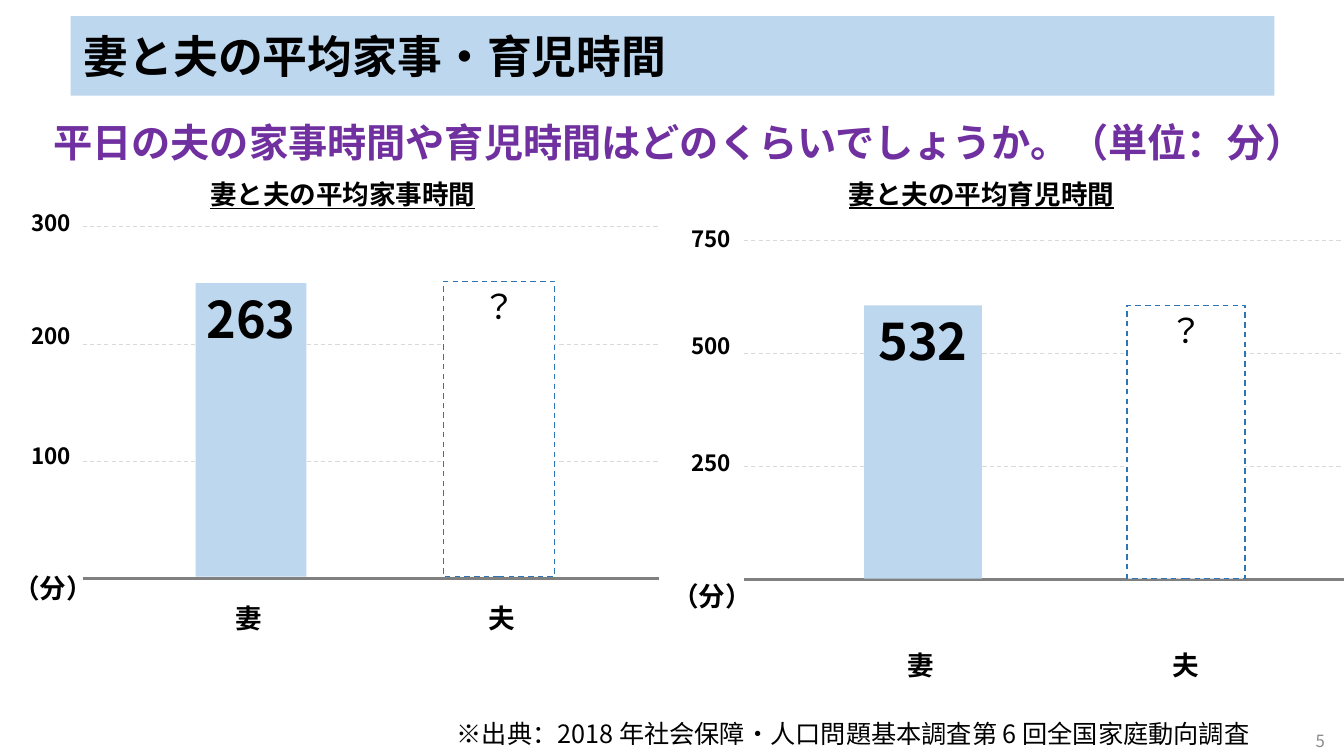
from dataclasses import dataclass

from lxml import etree
from pptx import Presentation
from pptx.dml.color import RGBColor
from pptx.enum.dml import MSO_LINE
from pptx.enum.shapes import MSO_CONNECTOR, MSO_SHAPE
from pptx.enum.text import MSO_ANCHOR, MSO_AUTO_SIZE, PP_ALIGN
from pptx.oxml.ns import qn
from pptx.util import Inches, Pt

FONT = "Noto Sans CJK JP"
BLACK, WHITE, SKY = "000000", "FFFFFF", "BDD7EE"
BLUE, PURPLE, GRAY, PALE, DIM = "2E75B6", "7030A0", "808080", "D9D9D9", "8C8C8C"
DASH = MSO_LINE.DASH
STRAIGHT = MSO_CONNECTOR.STRAIGHT
RECT = MSO_SHAPE.RECTANGLE
LEFT, CENTER = PP_ALIGN.LEFT, PP_ALIGN.CENTER
TOP, MIDDLE = MSO_ANCHOR.TOP, MSO_ANCHOR.MIDDLE
NO_FIT = MSO_AUTO_SIZE.NONE


@dataclass
class Panel:
    """Places and values of one bar panel."""

    title: str
    title_box: tuple
    left: float
    right: float
    base: float
    peak: float
    scale: tuple
    scale_tops: tuple
    scale_left: float
    scale_width: float
    value: str
    bars: tuple
    names: tuple
    unit: tuple


HOUSE = Panel(
    "妻と夫の平均家事時間", (0.24, 1.41, 6.32, 1.03),
    0.82, 6.54, 5.74, 2.25,
    ("300", "200", "100"), (1.98, 3.1, 4.29), 0.07, 0.88,
    "263", ((1.94, 2.81, 1.1, 2.91), (4.4, 2.79, 1.1, 2.93)),
    ((1.4, 5.62, 2.13, 1.02), (3.91, 5.62, 2.13, 1.02)),
    (-0.21, 5.48, 1.47, 0.71),
)
CHILD = Panel(
    "妻と夫の平均育児時間", (6.82, 1.54, 5.83, 0.76),
    7.38, 13.33, 5.75, 2.39,
    ("750", "500", "250"), (2.13, 3.2, 4.36), 6.58, 0.94,
    "532", ((8.57, 3.03, 1.17, 2.71), (11.18, 3.03, 1.17, 2.71)),
    ((8, 6.1, 2.26, 0.99), (10.63, 6.1, 2.26, 0.99)),
    (6.33, 5.56, 1.47, 0.71),
)


def rgb(code):
    """Turn a hex string into a colour."""
    return RGBColor.from_string(code)


def inch(box):
    """Turn a box of numbers into lengths."""
    return [Inches(n) for n in box]


def write(shape, text, size, color=BLACK, bold=True, under=False,
          align=CENTER, anchor=MIDDLE, pad=(0.13, 0.07), wrap=True):
    """Put one formatted run into a shape."""
    frame = shape.text_frame
    frame.auto_size = NO_FIT
    frame.word_wrap = wrap
    frame.vertical_anchor = anchor
    frame.margin_left = frame.margin_right = Inches(pad[0])
    frame.margin_top = frame.margin_bottom = Inches(pad[1])
    para = frame.paragraphs[0]
    para.alignment = align
    run = para.add_run()
    run.text = text
    font = run.font
    font.size, font.bold, font.underline = Pt(size), bold, under
    font.color.rgb = rgb(color)
    font.name = FONT
    etree.SubElement(run._r.get_or_add_rPr(), qn("a:ea")).set("typeface", FONT)


def label(slide, box, text, size, **style):
    """Add a text box."""
    write(slide.shapes.add_textbox(*inch(box)), text, size, **style)


def rule(slide, left, right, y, color, width, dash=None):
    """Add a level line."""
    line = slide.shapes.add_connector(STRAIGHT, *inch((left, y, right, y)))
    line.line.color.rgb = rgb(color)
    line.line.width = Pt(width)
    if dash:
        line.line.dash_style = dash
    etree.SubElement(line._element.spPr, qn("a:effectLst"))


def bar(slide, box, text, size, fill, edge=None, bold=True):
    """Add a bar with its value at the top."""
    shape = slide.shapes.add_shape(RECT, *inch(box))
    shape.shadow.inherit = False
    shape.fill.solid()
    shape.fill.fore_color.rgb = rgb(fill)
    if edge:
        shape.line.color.rgb = rgb(edge)
        shape.line.width = Pt(1)
        shape.line.dash_style = DASH
    else:
        shape.line.fill.background()
    write(shape, text, size, bold=bold, anchor=TOP, pad=(0.1, 0.05), wrap=False)


def draw(slide, panel):
    """Draw one panel with its grid, bars and labels."""
    label(slide, panel.title_box, panel.title, 19, under=True)
    for box, name in zip(panel.names, "妻夫"):
        label(slide, box, name, 19)
    rule(slide, panel.left, panel.right, panel.base, GRAY, 2.25)
    step = (panel.base - panel.peak) / len(panel.scale)
    for i, (mark, top) in enumerate(zip(panel.scale, panel.scale_tops)):
        rule(slide, panel.left, panel.right, panel.peak + i * step, PALE, 0.75, DASH)
        label(slide, (panel.scale_left, top, panel.scale_width, 0.47), mark, 16,
              anchor=TOP, pad=(0.1, 0.1))
    wife, husband = panel.bars
    bar(slide, wife, panel.value, 36, SKY)
    bar(slide, husband, "？", 24, WHITE, BLUE, bold=False)
    label(slide, panel.unit, "（分）", 19)


def head(slide, text):
    """Fill and place the title band."""
    title = slide.shapes.title
    title.left, title.top, title.width, title.height = inch((0.7, 0.16, 11.94, 0.79))
    title.fill.solid()
    title.fill.fore_color.rgb = rgb(SKY)
    write(title, text, 32, align=LEFT, pad=(0.13, 0.13))


def main():
    """Build the slide and save it."""
    deck = Presentation()
    deck.slide_width, deck.slide_height = Inches(13.33), Inches(7.5)
    slide = deck.slides.add_slide(deck.slide_layouts[5])
    head(slide, "妻と夫の平均家事・育児時間")
    label(slide, (0.4, 1.1, 12.9, 0.94),
          "平日の夫の家事時間や育児時間はどのくらいでしょうか。（単位：分）", 28,
          color=PURPLE, align=LEFT, anchor=TOP)
    for panel in (HOUSE, CHILD):
        draw(slide, panel)
    label(slide, (4.4, 7, 8.42, 0.57),
          "※出典：2018 年社会保障・人口問題基本調査第 6 回全国家庭動向調査", 18,
          bold=False, align=LEFT, anchor=TOP, pad=(0.13, 0.13))
    label(slide, (12.88, 7.2, 0.43, 0.25), "5", 12, color=DIM, bold=False,
          anchor=TOP, pad=(0.05, 0.05))
    deck.save("out.pptx")


if __name__ == "__main__":
    main()
